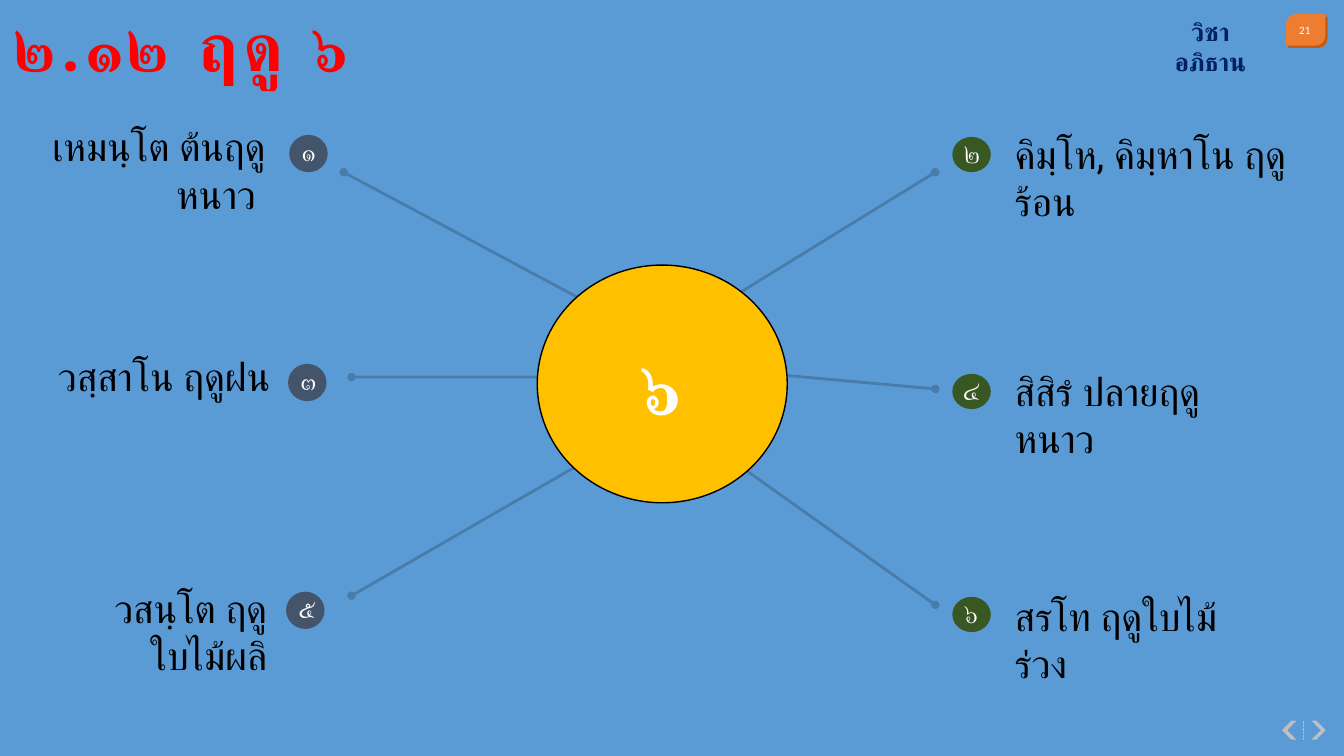
from lxml import etree
from pptx import Presentation
from pptx.dml.color import RGBColor
from pptx.enum.dml import MSO_LINE
from pptx.enum.shapes import MSO_CONNECTOR, MSO_SHAPE
from pptx.enum.text import MSO_ANCHOR, MSO_AUTO_SIZE, PP_ALIGN
from pptx.oxml.ns import qn
from pptx.util import Cm, Pt

LEFT, CENTER, RIGHT = PP_ALIGN.LEFT, PP_ALIGN.CENTER, PP_ALIGN.RIGHT
TOP, MIDDLE = MSO_ANCHOR.TOP, MSO_ANCHOR.MIDDLE
FIT_SHAPE = MSO_AUTO_SIZE.SHAPE_TO_FIT_TEXT
STRAIGHT = MSO_CONNECTOR.STRAIGHT
OVAL, CHEVRON = MSO_SHAPE.OVAL, MSO_SHAPE.CHEVRON
TAB = MSO_SHAPE.ROUND_2_DIAG_RECTANGLE
DOTTED = MSO_LINE.ROUND_DOT

SLATE, GREEN, GREY = "44546A", "385723", "BFBFBF"
BADGE_WIDTH = 0.97

# Numeral, label, label box (left, top, width), badge (left, top),
# numeral width, spoke (outer end, inner end); all in centimetres
LEFT_SEASONS = [
    ("๑", "เหมนฺโต ต้นฤดูหนาว ", (0.51, 2.97, 6.43), (7.29, 3.4), 0.86,
     ((8.66, 4.34), (15.04, 7.75))),
    ("๓", "วสฺสาโน ฤดูฝน", (1.09, 8.76, 5.97), (7.26, 9.17), 0.86,
     ((8.86, 9.5), (14, 9.5))),
    ("๕", "วสนฺโต ฤดูใบไม้ผลิ", (1.09, 14.6, 5.89), (7.21, 14.91), 0.86,
     ((8.86, 15.01), (14.73, 11.63))),
]
RIGHT_SEASONS = [
    ("๒", "คิมฺโห, คิมฺหาโน ฤดูร้อน", (25.32, 3.15, 7.52), (24, 3.45), 0.86,
     ((23.57, 4.34), (18.49, 7.47))),
    ("๔", "สิสิรํ ปลายฤดูหนาว", (25.32, 9.14, 6.81), (24, 9.42), 1.78,
     ((23.57, 9.8), (19.15, 9.4))),
    ("๖", "สรโท ฤดูใบไม้ร่วง", (25.32, 14.81, 5.79), (24, 15.04), 1.78,
     ((23.57, 15.24), (18.49, 11.63))),
]


def color(value):
    return RGBColor.from_string(value)


def write(frame, text, size, font, ink, align, anchor, bold=False):
    frame.word_wrap = True
    frame.vertical_anchor = anchor
    para = frame.paragraphs[0]
    para.text = text
    para.alignment = align
    para.font.size = Pt(size)
    para.font.name = font
    para.font.bold = bold
    para.font.color.rgb = color(ink)
    return para


def add_text(page, box, text, size, font, ink, align=LEFT, anchor=TOP, bold=False):
    frame = page.shapes.add_textbox(*map(Cm, box)).text_frame
    para = write(frame, text, size, font, ink, align, anchor, bold)
    frame.auto_size = FIT_SHAPE
    return para


def add_filled(page, kind, box, fill, adjustment=None):
    shape = page.shapes.add_shape(kind, *map(Cm, box))
    shape.shadow.inherit = False
    shape.fill.solid()
    shape.fill.fore_color.rgb = color(fill)
    shape.line.fill.background()
    if adjustment is not None:
        shape.adjustments[0] = adjustment
    return shape


def add_line(page, start, end, ink, width):
    line = page.shapes.add_connector(STRAIGHT, *map(Cm, (*start, *end)))
    line.line.color.rgb = color(ink)
    line.line.width = Pt(width)
    etree.SubElement(line._element.spPr, qn("a:effectLst"))
    return line


def add_spoke(page, outer, inner):
    """Faint line with a dot at its outer end."""
    outline = add_line(page, outer, inner, "000000", 2).line._get_or_add_ln()
    ink = outline.find(qn("a:solidFill"))[0]
    etree.SubElement(ink, qn("a:alpha"), val="20000")
    etree.SubElement(outline, qn("a:headEnd"), type="oval")


def add_page_tab(page, left, top):
    """Slide number on a two-layer tab."""
    for offset, fill in ((0.06, "C55A11"), (0, "ED7D31")):
        box = (left + offset, top + offset, 0.99, 0.79)
        add_filled(page, TAB, box, fill, 0.323)
    add_text(page, (left - 0.12, top + 0.12, 1.19, 0.53), "21", 8, "Calibri",
             "FEFEFE", CENTER, MIDDLE)


def add_navigation(page, left, top):
    """Two chevrons with a dotted divider."""
    width, height = 0.36, 0.48
    add_filled(page, CHEVRON, (left + 0.74, top, width, height), GREY, 0.663)
    back = add_filled(page, CHEVRON, (left, top, width, height), GREY, 0.64)
    back.rotation = 180
    middle = left + 0.54
    divider = add_line(page, (middle, top + height), (middle, top), GREY, 0.5)
    divider.line.dash_style = DOTTED


def add_heading(page, left, top):
    title = add_text(page, (left, top, 27.2, 2.31), "๒.๑๒ ฤดู ๖", 48, "Roboto",
                     "FF0000", anchor=MIDDLE, bold=True)
    title.runs[0].font._element.set("spc", "400")
    add_text(page, (left + 29.11, top + 0.31, 2.49, 1.02), "วิชาอภิธาน", 18,
             "Roboto", "002060", CENTER, bold=True)


def add_season(page, season, fill, badge_height, align):
    numeral, label, (left, top, width), badge, numeral_width, _ = season
    add_filled(page, OVAL, (*badge, BADGE_WIDTH, badge_height), fill)
    numeral_left = badge[0] + (BADGE_WIDTH - numeral_width) / 2
    add_text(page, (numeral_left, badge[1] - 0.34, numeral_width, 1.45), numeral,
             20, "Montserrat", "FEFEFE", CENTER, MIDDLE)
    add_text(page, (left, top, width, 1.45), label, 28, "Roboto", "000000", align)


def add_hub(page, box):
    hub = add_filled(page, OVAL, box, "FFC000")
    hub.line.color.rgb = color("000000")
    hub.line.width = Pt(1)
    frame = hub.text_frame
    frame.margin_left = frame.margin_right = 0
    frame.margin_top = frame.margin_bottom = 0
    write(frame, "๖", 54, "Roboto", "FFFFFF", CENTER, MIDDLE, True)


def build_seasons_page(deck):
    page = deck.slides.add_slide(deck.slide_layouts[6])
    page.background.fill.solid()
    page.background.fill.fore_color.rgb = color("5B9BD5")

    # Page furniture
    add_page_tab(page, 32.41, 0.36)
    add_navigation(page, 32.31, 18.16)

    # Spokes lie beneath the hub
    for season in LEFT_SEASONS + RIGHT_SEASONS:
        add_spoke(page, *season[-1])

    add_heading(page, 0.15, -0.03)
    for season in LEFT_SEASONS:
        add_season(page, season, SLATE, 0.94, RIGHT)
    for season in RIGHT_SEASONS:
        add_season(page, season, GREEN, 0.89, LEFT)
    add_hub(page, (13.54, 6.68, 6.3, 5.99))


def main():
    deck = Presentation()
    deck.slide_width, deck.slide_height = Cm(33.87), Cm(19.05)
    build_seasons_page(deck)
    deck.save("out.pptx")


if __name__ == "__main__":
    main()
